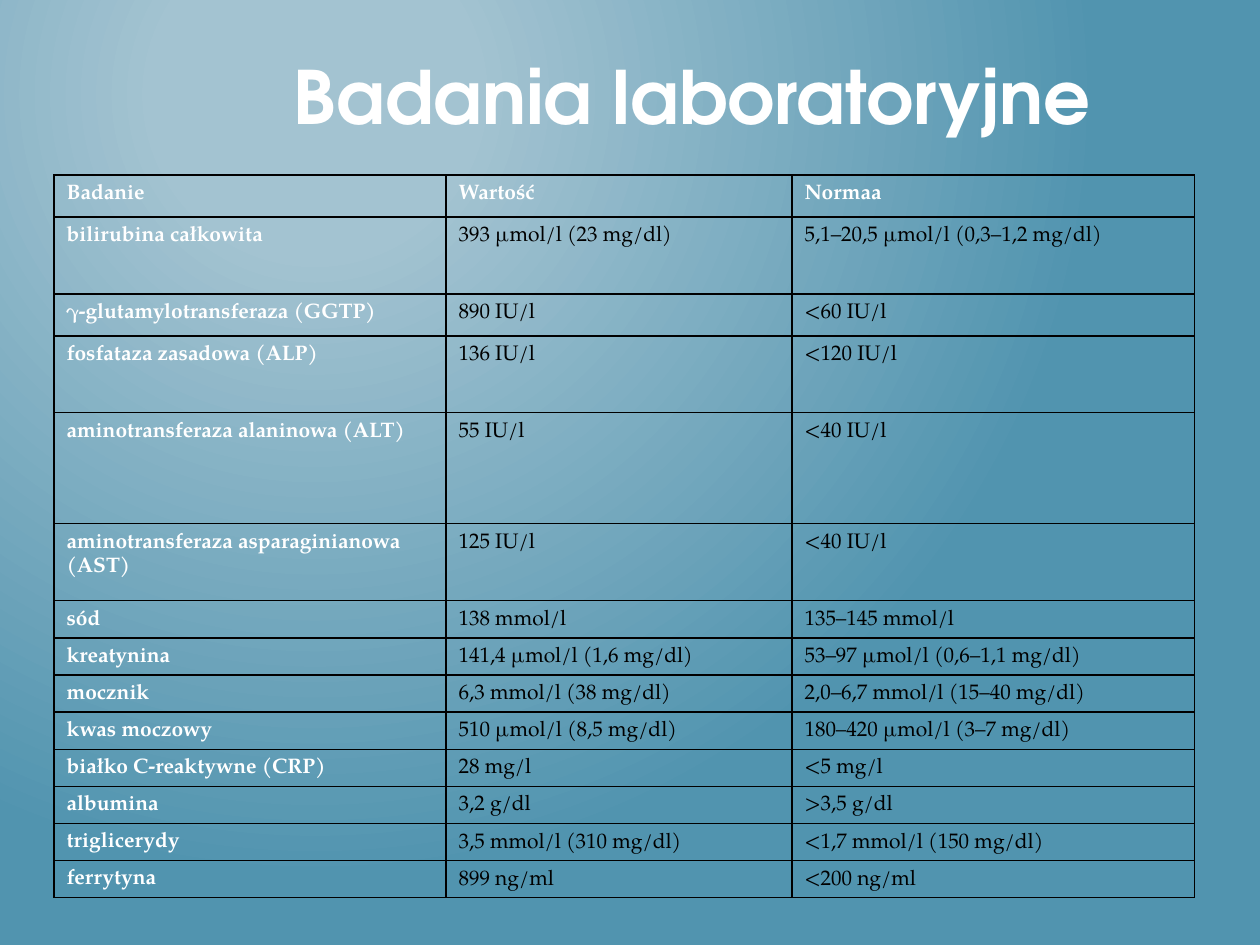
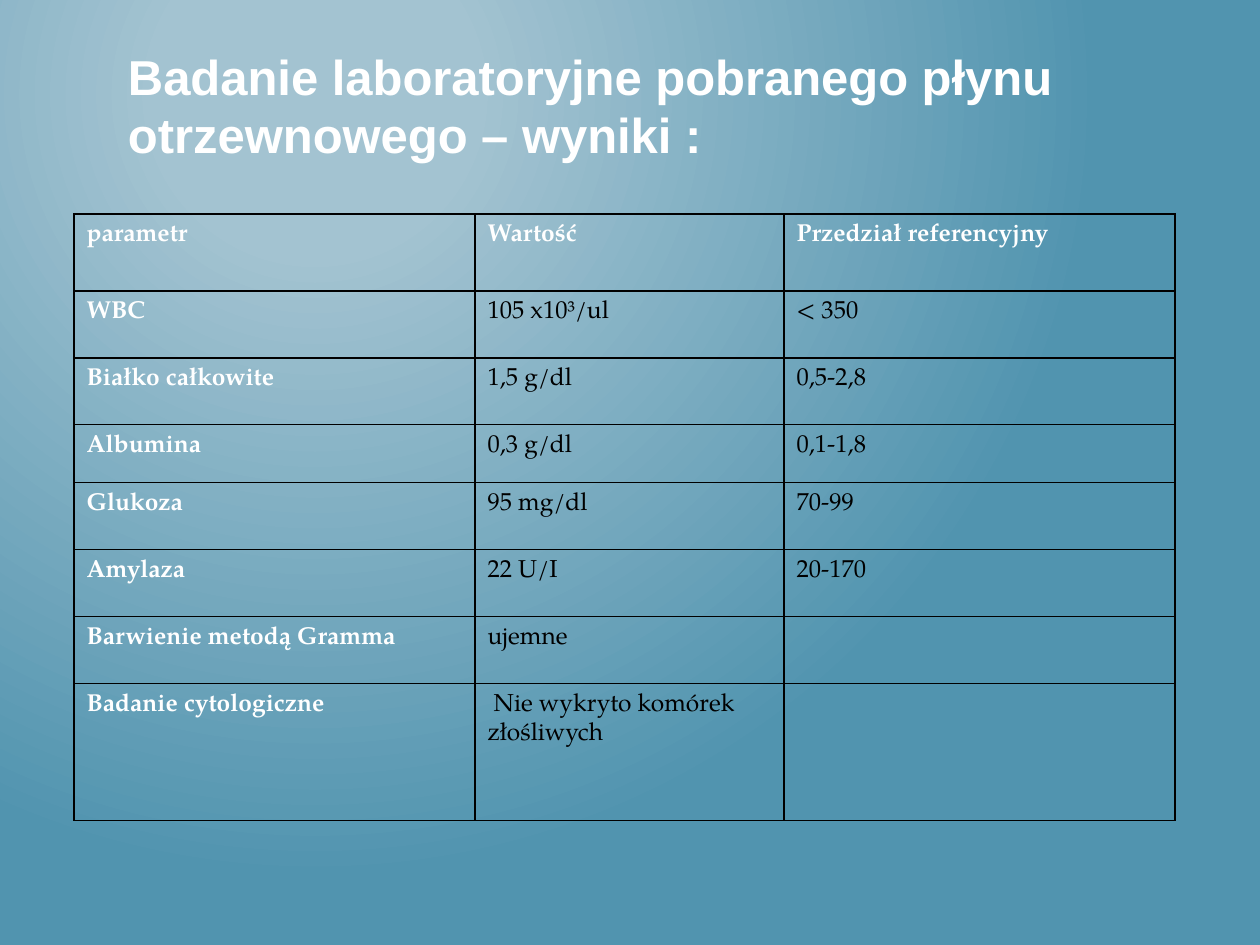
from lxml import etree
from pptx import Presentation
from pptx import util as u
from pptx.dml.color import RGBColor
from pptx.enum import text
from pptx.oxml import parse_xml
from pptx.oxml.ns import nsdecls, qn

PX = u.Inches(1) / 126

LAB_TESTS = [
    ("Badanie", "Wartość", "Normaa"),
    ("bilirubina całkowita", "393 µmol/l (23 mg/dl)", "5,1–20,5 µmol/l (0,3–1,2 mg/dl)"),
    ("γ-glutamylotransferaza (GGTP)", "890 IU/l", "<60 IU/l"),
    ("fosfataza zasadowa (ALP)", "136 IU/l", "<120 IU/l"),
    ("aminotransferaza alaninowa (ALT)", "55 IU/l", "<40 IU/l"),
    ("aminotransferaza asparaginianowa (AST)", "125 IU/l", "<40 IU/l"),
    ("sód", "138 mmol/l", "135–145 mmol/l"),
    ("kreatynina", "141,4 µmol/l (1,6 mg/dl)", "53–97 µmol/l (0,6–1,1 mg/dl)"),
    ("mocznik", "6,3 mmol/l (38 mg/dl)", "2,0–6,7 mmol/l (15–40 mg/dl)"),
    ("kwas moczowy", "510 µmol/l (8,5 mg/dl)", "180–420 µmol/l (3–7 mg/dl)"),
    ("białko C-reaktywne (CRP)", "28 mg/l", "<5 mg/l"),
    ("albumina", "3,2 g/dl", ">3,5 g/dl"),
    ("triglicerydy", "3,5 mmol/l (310 mg/dl)", "<1,7 mmol/l (150 mg/dl)"),
    ("ferrytyna", "899 ng/ml", "<200 ng/ml"),
]

FLUID_TESTS = [
    ("parametr", "Wartość", "Przedział referencyjny"),
    ("WBC", "105 x10³/ul", "< 350"),
    ("Białko całkowite", "1,5 g/dl", "0,5-2,8"),
    ("Albumina", "0,3 g/dl", "0,1-1,8"),
    ("Glukoza", "95 mg/dl", "70-99"),
    ("Amylaza", "22 U/I", "20-170"),
    ("Barwienie metodą Gramma", "ujemne", ""),
    ("Badanie cytologiczne", " Nie wykryto komórek złośliwych", ""),
]


def px(n):
    return u.Emu(round(n * PX))


def rgb(value):
    return RGBColor.from_string(value)


class Deck:
    WHITE, BLACK = "FFFFFF", "000000"
    GLOW, TEAL = "A3C3D1", "5194AF"
    TABLE_FONT = "TeX Gyre Pagella"
    INSET = 13

    def __init__(self):
        self.prs = Presentation()
        self.prs.slide_width, self.prs.slide_height = px(1260), px(945)
        self.s = None

    def slide(self):
        self.s = self.prs.slides.add_slide(self.prs.slide_layouts[6])
        self.background()

    def background(self):
        """Fill the slide with a radial glow from the upper left."""
        fill = self.s.background.fill
        fill.gradient()
        for stop, color, place in zip(fill.gradient_stops, (self.GLOW, self.TEAL), (0.2, 1)):
            stop.color.rgb = rgb(color)
            stop.position = place
        grad = self.s.background._cSld.find(".//" + qn("a:gradFill"))
        grad.replace(grad.find(qn("a:lin")), parse_xml(
            f'<a:path {nsdecls("a")} path="circle">'
            '<a:fillToRect l="50000" t="20000" r="100000" b="100000"/></a:path>'))

    def style(self, p, font, size, color, bold):
        p.font.name, p.font.size, p.font.bold = font, u.Pt(size), bold
        p.font.color.rgb = rgb(color)

    def title(self, words, top, height, font, size, indent=0):
        tf = self.s.shapes.add_textbox(px(115), px(top), px(1086), px(height)).text_frame
        tf.word_wrap = True
        tf.vertical_anchor = text.MSO_ANCHOR.BOTTOM
        tf.margin_left = px(self.INSET + indent)
        p = tf.paragraphs[0]
        p.text = words
        self.style(p, font, size, self.WHITE, True)

    def table(self, rows, left, top, widths, heights, size):
        frame = self.s.shapes.add_table(len(rows), len(widths), px(left), px(top),
                                        px(sum(widths)), px(sum(heights)))
        table = frame.table
        table.first_row = table.horz_banding = False
        for column, width in zip(table.columns, widths):
            column.width = px(width)
        for row, height in zip(table.rows, heights):
            row.height = px(height)
        for i, row in enumerate(rows):
            for j, words in enumerate(row):
                self.cell(table.cell(i, j), words, size, heading=i == 0 or j == 0)

    def cell(self, cell, words, size, heading):
        p = cell.text_frame.paragraphs[0]
        p.text = words
        p.line_spacing = 1.15
        self.style(p, self.TABLE_FONT, size, self.WHITE if heading else self.BLACK, heading)
        props = cell._tc.get_or_add_tcPr()
        for side in ("lnL", "lnR", "lnT", "lnB"):
            line = etree.SubElement(props, qn(f"a:{side}"), w=str(u.Pt(0.75)))
            solid = etree.SubElement(line, qn("a:solidFill"))
            etree.SubElement(solid, qn("a:srgbClr"), val=self.BLACK)
        cell.fill.background()
        # Borders must come before the fill in the cell properties.
        props.append(props.find(qn("a:noFill")))


def main():
    deck = Deck()

    deck.slide()
    deck.table(LAB_TESTS, 54, 175, (392, 346, 403),
               [42, 77, 42, 77, 111, 77] + [37] * 8, 12)
    deck.title("Badania laboratoryjne", 16, 129, "TeX Gyre Adventor", 42, indent=166)

    deck.slide()
    deck.table(FLUID_TESTS, 74, 214, (401, 309, 391),
               [77, 67, 67, 58, 67, 67, 67, 137], 14)
    deck.title("Badanie laboratoryjne pobranego płynu otrzewnowego – wyniki :",
               21, 149, "Arial", 28)

    deck.prs.save("out.pptx")


if __name__ == "__main__":
    main()
